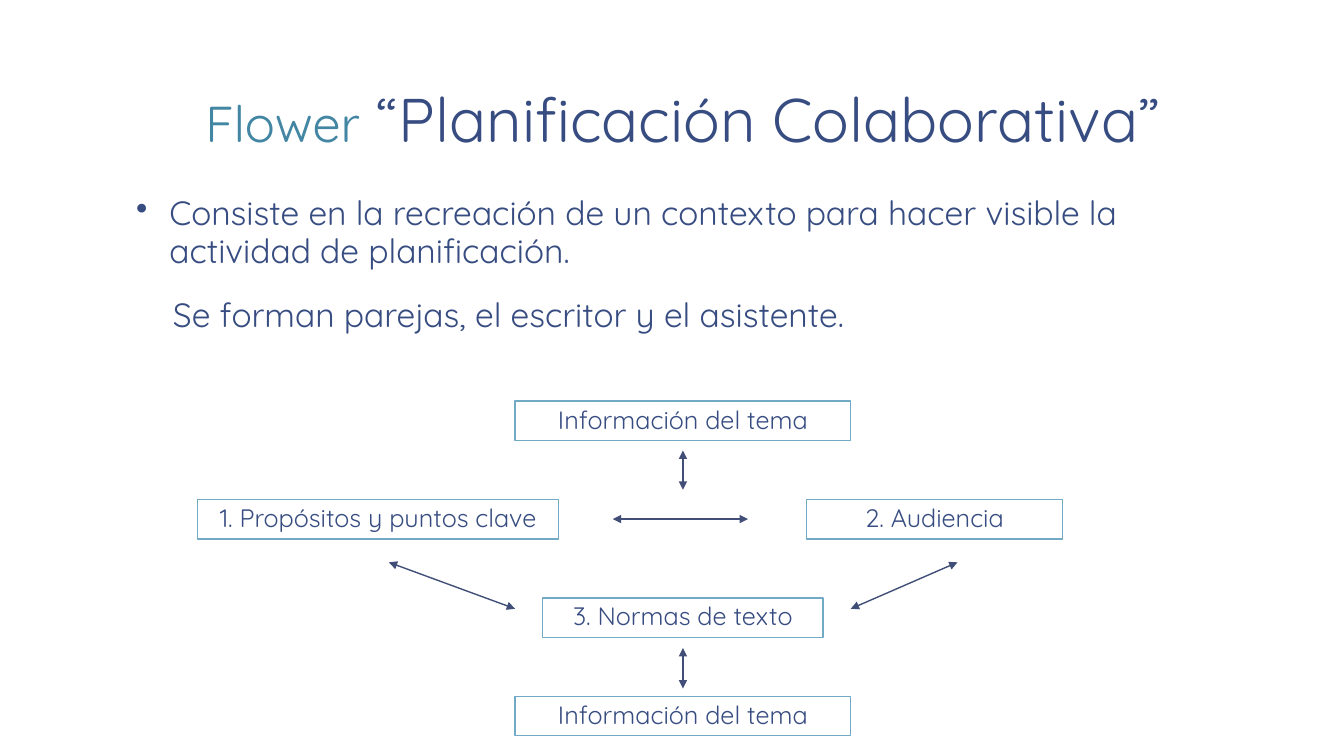
from dataclasses import dataclass

from lxml.etree import SubElement
from pptx import Presentation
from pptx.dml.color import RGBColor
from pptx.enum.shapes import MSO_CONNECTOR, MSO_SHAPE
from pptx.enum.text import MSO_ANCHOR, MSO_AUTO_SIZE, PP_ALIGN
from pptx.oxml.ns import qn
from pptx.util import Cm, Pt

FONT = "Quicksand"
COLORS = {
    "paper": "FFFFFF",
    "text": "374C81",
    "author": "4386A4",
    "border": "70AAC4",
    "arrow": "414E77",
}
CENTER = 17.21  # middle column of the diagram, cm
BOX_HEIGHT = 0.99
FIRST_ROW, ROW_STEP = 10.11, 2.48


@dataclass
class Label:
    text: str
    center: float
    row: int
    width: float


@dataclass
class Arrow:
    x1: float
    y1: float
    x2: float
    y2: float


LABELS = [
    Label("Información del tema", CENTER, 0, 8.46),
    Label("2. Audiencia", 23.55, 1, 6.45),
    Label("1. Propósitos y puntos clave", 9.53, 1, 9.09),
    Label("3. Normas de texto", CENTER, 2, 7.06),
    Label("Información del tema", CENTER, 3, 8.46),
]
ARROWS = [
    Arrow(CENTER, 11.35, CENTER, 12.34),
    Arrow(CENTER, 16.33, CENTER, 17.35),
    Arrow(15.44, 13.08, 18.85, 13.08),
    Arrow(21.44, 15.34, 24.13, 14.17),
    Arrow(9.8, 14.17, 12.98, 15.34),
]


def color(name: str) -> RGBColor:
    return RGBColor.from_string(COLORS[name])


def style_paragraph(para, size: float) -> None:
    para.line_spacing = 0.95
    para.font.name = FONT
    para.font.size = Pt(size)
    para.font.color.rgb = color("text")


def set_frame(frame, anchor: MSO_ANCHOR) -> None:
    frame.word_wrap = True
    frame.auto_size = MSO_AUTO_SIZE.NONE
    frame.vertical_anchor = anchor
    frame.margin_left = frame.margin_right = Cm(0.33)
    frame.margin_top = frame.margin_bottom = Cm(0.18)


def add_title(page) -> None:
    title = page.shapes.title
    title.left, title.top, title.width, title.height = Cm(3.1), Cm(0.2), Cm(28.22), Cm(3.89)
    set_frame(title.text_frame, MSO_ANCHOR.BOTTOM)
    para = title.text_frame.paragraphs[0]
    para.alignment = PP_ALIGN.CENTER
    para.line_spacing = 0.85
    para.font.name = FONT
    for text, size, name in (
        ("Flower", 36, "author"),
        (" “Planificación Colaborativa”", 44, "text"),
    ):
        span = para.add_run()
        span.text = text
        span.font.size = Pt(size)
        span.font.color.rgb = color(name)


def add_body(page) -> None:
    box = page.shapes.add_textbox(Cm(3.1), Cm(4.72), Cm(28.22), Cm(4.37))
    frame = box.text_frame
    set_frame(frame, MSO_ANCHOR.TOP)

    bulleted = frame.paragraphs[0]
    bulleted.text = (
        "Consiste en la recreación de un contexto para hacer visible "
        "la actividad de planificación."
    )
    properties = bulleted._p.get_or_add_pPr()
    properties.set("marL", str(Cm(0.84)))
    properties.set("indent", str(-Cm(0.84)))
    SubElement(properties, qn("a:buChar"), char="•")
    style_paragraph(bulleted, 24)

    indented = frame.add_paragraph()
    indented.text = "Se forman parejas, el escritor y el asistente."
    indented._p.get_or_add_pPr().set("marL", str(Cm(0.93)))
    indented.space_before = Pt(18.7)
    style_paragraph(indented, 24)


def add_label(page, label: Label) -> None:
    box = page.shapes.add_shape(
        MSO_SHAPE.RECTANGLE,
        Cm(label.center - label.width / 2),
        Cm(FIRST_ROW + label.row * ROW_STEP),
        Cm(label.width),
        Cm(BOX_HEIGHT),
    )
    box.shadow.inherit = False
    box.fill.solid()
    box.fill.fore_color.rgb = color("paper")
    box.line.color.rgb = color("border")
    box.line.width = Pt(1)
    frame = box.text_frame
    frame.word_wrap = True
    frame.vertical_anchor = MSO_ANCHOR.TOP
    para = frame.paragraphs[0]
    para.text = label.text
    para.alignment = PP_ALIGN.CENTER
    style_paragraph(para, 18)


def add_arrow(page, arrow: Arrow) -> None:
    line = page.shapes.add_connector(
        MSO_CONNECTOR.STRAIGHT, Cm(arrow.x1), Cm(arrow.y1), Cm(arrow.x2), Cm(arrow.y2)
    )
    line.line.color.rgb = color("arrow")
    line.line.width = Pt(1)
    outline = line.line._get_or_add_ln()
    for end in ("a:headEnd", "a:tailEnd"):
        SubElement(outline, qn(end), type="triangle")
    SubElement(line._element.spPr, qn("a:effectLst"))


def main() -> None:
    deck = Presentation()
    deck.slide_width, deck.slide_height = Cm(33.87), Cm(19.05)
    page = deck.slides.add_slide(deck.slide_layouts[5])
    page.background.fill.solid()
    page.background.fill.fore_color.rgb = color("paper")

    # Heading and explanation
    add_title(page)
    add_body(page)

    # Diagram
    for label in LABELS:
        add_label(page, label)
    for arrow in ARROWS:
        add_arrow(page, arrow)

    deck.save("out.pptx")


if __name__ == "__main__":
    main()
